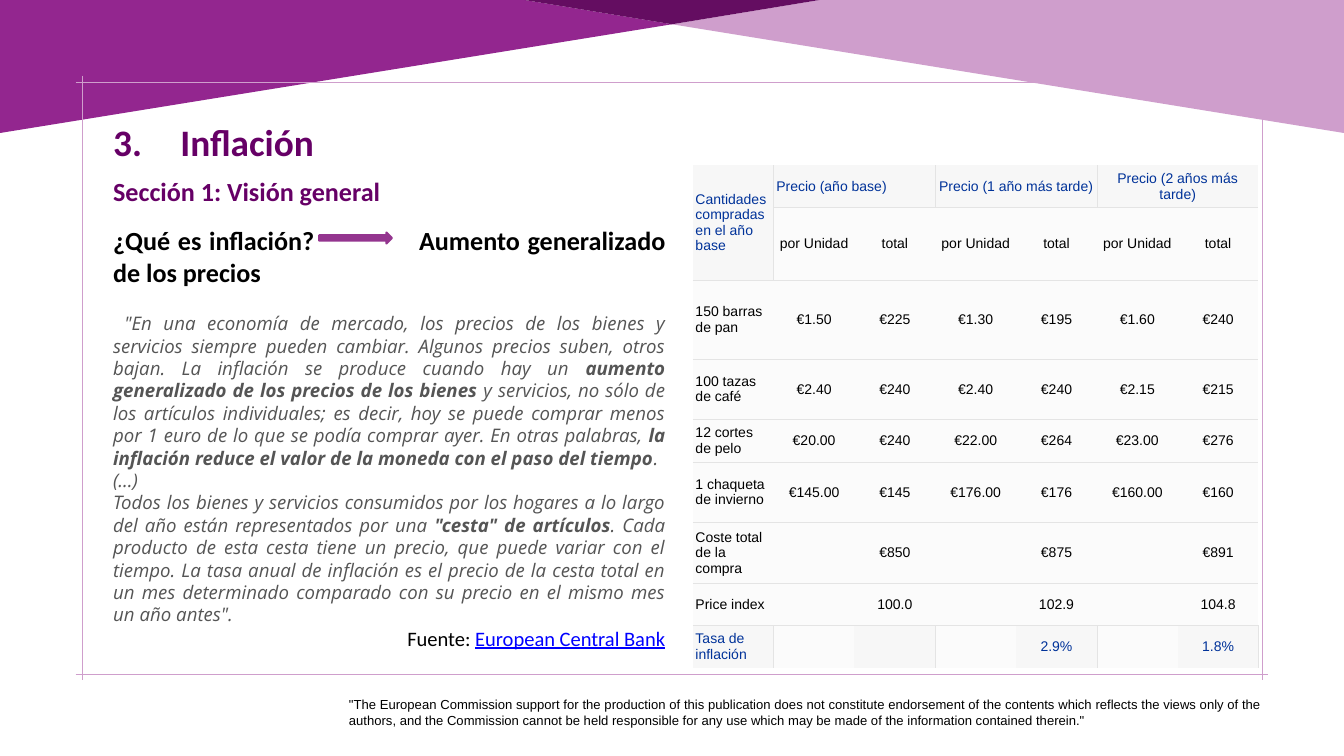
from dataclasses import dataclass

from lxml import etree
from pptx import Presentation
from pptx.dml.color import RGBColor
from pptx.enum.shapes import MSO_SHAPE
from pptx.enum.text import MSO_ANCHOR, MSO_AUTO_SIZE, PP_ALIGN
from pptx.oxml.ns import qn
from pptx.util import Pt

LEFT, CENTER, RIGHT, JUSTIFY = PP_ALIGN.LEFT, PP_ALIGN.CENTER, PP_ALIGN.RIGHT, PP_ALIGN.JUSTIFY
TOP, MIDDLE = MSO_ANCHOR.TOP, MSO_ANCHOR.MIDDLE
NO_AUTOFIT = MSO_AUTO_SIZE.NONE
RIGHT_ARROW = MSO_SHAPE.RIGHT_ARROW


@dataclass(frozen=True)
class Theme:
    purple: str = "93268F"
    lilac: str = "CF9ECC"
    plum: str = "640D61"
    title: str = "660066"
    arrow: str = "94358F"
    black: str = "000000"
    quote: str = "555555"
    link: str = "0000FF"
    header: str = "003299"
    header_fill: str = "F7F7F7"
    cell_fill: str = "FBFBFB"
    rule: str = "E4E4E4"
    heading_font: str = "Calibri"
    quote_font: str = "Open Sans"
    table_font: str = "Arial"
    title_size: int = 40
    section_size: int = 28
    source_size: int = 22
    quote_size: int = 20
    table_size: int = 15
    notice_size: int = 14


THEME = Theme()

NOTICE = (
    '"The European Commission support for the production of this publication does not constitute '
    "endorsement of the contents which reflects the views only of the authors, and the Commission "
    'cannot be held responsible for any use which may be made of the information contained therein."'
)

# Alternating regular and bold parts of each quoted paragraph
QUOTE = [
    [
        '"En una economía de mercado, los precios de los bienes y servicios siempre pueden cambiar. '
        "Algunos precios suben, otros bajan. La inflación se produce cuando hay un ",
        "aumento generalizado de los precios de los bienes",
        " y servicios, no sólo de los artículos individuales; es decir, hoy se puede comprar menos "
        "por 1 euro de lo que se podía comprar ayer. En otras palabras, ",
        "la inflación reduce el valor de la moneda con el paso del tiempo",
        ".",
    ],
    ["(…)"],
    [
        "Todos los bienes y servicios consumidos por los hogares a lo largo del año están "
        "representados por una ",
        '"cesta" de artículos',
        ". Cada producto de esta cesta tiene un precio, que puede variar con el tiempo. La tasa anual "
        "de inflación es el precio de la cesta total en un mes determinado comparado con su precio "
        'en el mismo mes un año antes".',
    ],
]

PRICES = [
    ["Cantidades compradas en el año base", "Precio (año base)", "", "Precio (1 año más tarde)", "",
     "Precio (2 años más tarde)", ""],
    [""] + ["por Unidad", "total"] * 3,
    ["150 barras de pan", "€1.50", "€225", "€1.30", "€195", "€1.60", "€240"],
    ["100 tazas de café", "€2.40", "€240", "€2.40", "€240", "€2.15", "€215"],
    ["12 cortes de pelo", "€20.00", "€240", "€22.00", "€264", "€23.00", "€276"],
    ["1 chaqueta de invierno", "€145.00", "€145", "€176.00", "€176", "€160.00", "€160"],
    ["Coste total de la compra", "", "€850", "", "€875", "", "€891"],
    ["Price index", "", "100.0", "", "102.9", "", "104.8"],
    ["Tasa de inflación", "", "", "", "2.9%", "", "1.8%"],
]
ROW_HEIGHTS = [45.4, 78, 84.2, 65, 45.4, 65, 65, 45.4, 45.4]


def rgb(value):
    return RGBColor.from_string(value)


def place(item, left, top, width, height):
    item.left, item.top, item.width, item.height = Pt(left), Pt(top), Pt(width), Pt(height)


def add_run(paragraph, text, font, size, color, bold=False, italic=False, underline=False):
    run = paragraph.add_run()
    run.text = text
    run.font.name, run.font.size = font, Pt(size)
    run.font.color.rgb = rgb(color)
    run.font.bold, run.font.italic, run.font.underline = bold, italic, underline


def format_paragraph(paragraph, align, before=0, indent=0):
    paragraph.alignment = align
    paragraph.space_before = Pt(before)
    props = paragraph._p.get_or_add_pPr()
    props.set("marL", "0")
    props.set("indent", str(Pt(indent)))
    etree.SubElement(props, qn("a:buNone"))


def prepare_frame(frame):
    frame.word_wrap = True
    frame.auto_size = NO_AUTOFIT
    frame.vertical_anchor = TOP
    return frame


def add_polygon(slide, points, color):
    corners = [(Pt(x), Pt(y)) for x, y in points]
    builder = slide.shapes.build_freeform(*corners[0])
    builder.add_line_segments(corners[1:], close=True)
    band = builder.convert_to_shape()
    band.shadow.inherit = False
    band.fill.solid()
    band.fill.fore_color.rgb = rgb(color)
    band.line.fill.background()


def add_crossed_frame(slide, left, top, right, bottom, overrun):
    # Four strokes that run past the corners
    strokes = [((left - overrun, y), (right + overrun, y)) for y in (top, bottom)]
    strokes += [((x, top - overrun), (x, bottom + overrun)) for x in (left, right)]
    builder = slide.shapes.build_freeform(Pt(strokes[0][0][0]), Pt(strokes[0][0][1]))
    for (x1, y1), (x2, y2) in strokes:
        builder.move_to(Pt(x1), Pt(y1))
        builder.add_line_segments([(Pt(x2), Pt(y2))], close=False)
    frame = builder.convert_to_shape()
    frame.shadow.inherit = False
    frame.fill.background()
    frame.line.color.rgb = rgb(THEME.lilac)
    frame.line.width = Pt(0.5)


def add_backdrop(slide):
    # Ribbons that cross at the top centre
    add_polygon(slide, [(0, 142.5), (0, 0), (562, 0), (720, 26)], THEME.purple)
    add_polygon(slide, [(1440, 142.5), (720, 26), (878, 0), (1440, 0)], THEME.lilac)
    add_polygon(slide, [(720, 26), (562, 0), (878, 0)], THEME.plum)
    add_crossed_frame(slide, 88, 88, 1352, 722, 7)


def fill_title(title):
    place(title, 114, 124, 936, 102)
    frame = prepare_frame(title.text_frame)
    topic = frame.paragraphs[0]
    format_paragraph(topic, LEFT)
    add_run(topic, "3.\t\tInflación", THEME.heading_font, THEME.title_size, THEME.title, bold=True)
    section = frame.add_paragraph()
    format_paragraph(section, LEFT, before=12)
    add_run(section, "Sección 1: Visión general", THEME.heading_font, THEME.section_size,
            THEME.title, bold=True)


def fill_body(body):
    place(body, 114, 237, 606, 497)
    frame = prepare_frame(body.text_frame)
    question = frame.paragraphs[0]
    format_paragraph(question, JUSTIFY)
    # The tabs leave room for the arrow
    add_run(question, "¿Qué es inflación?\t\t\t\tAumento generalizado de los precios",
            THEME.heading_font, THEME.section_size, THEME.black, bold=True)
    for i, parts in enumerate(QUOTE):
        passage = frame.add_paragraph()
        format_paragraph(passage, JUSTIFY, before=0 if i else 26.4, indent=0 if i else 12)
        for j, part in enumerate(parts):
            add_run(passage, part, THEME.quote_font, THEME.quote_size, THEME.quote,
                    bold=j % 2 == 1, italic=True)
    source = frame.add_paragraph()
    format_paragraph(source, RIGHT)
    add_run(source, "Fuente: ", THEME.heading_font, THEME.source_size, THEME.black)
    add_run(source, "European Central Bank", THEME.heading_font, THEME.source_size, THEME.link,
            underline=True)


def set_borders(cell, sides):
    props = cell._tc.get_or_add_tcPr()
    for side in "LRTB":
        line = etree.SubElement(props, qn(f"a:ln{side}"), w=str(Pt(0.75)))
        if side in sides:
            solid = etree.SubElement(line, qn("a:solidFill"))
            etree.SubElement(solid, qn("a:srgbClr"), val=THEME.rule)
        else:
            etree.SubElement(line, qn("a:noFill"))


def border_sides(row, col):
    last = len(PRICES) - 1
    # Vertical rules close the label column and each pair of price columns
    ends = {0: (0, 2, 4), 1: (0,), last: (0, 2, 4, 6)}.get(row, ())
    return (("L" if col - 1 in ends else "") + ("R" if col in ends else "")
            + ("T" if row > 0 else "") + ("B" if row < last else ""))


def add_price_table(slide):
    last = len(PRICES) - 1
    table = slide.shapes.add_table(len(PRICES), len(PRICES[0]), Pt(742.4), Pt(177), Pt(606),
                                   Pt(sum(ROW_HEIGHTS))).table
    table.first_row = table.horz_banding = False
    for row, height in zip(table.rows, ROW_HEIGHTS):
        row.height = Pt(height)
    for r, values in enumerate(PRICES):
        for c, value in enumerate(values):
            cell = table.cell(r, c)
            set_borders(cell, border_sides(r, c))
            shaded = r == 0 or (r == last and c % 2 == 0)
            cell.fill.solid()
            cell.fill.fore_color.rgb = rgb(THEME.header_fill if shaded else THEME.cell_fill)
            cell.vertical_anchor = MIDDLE
            cell.margin_left = cell.margin_right = cell.margin_top = cell.margin_bottom = Pt(2.8)
            if value:
                entry = cell.text_frame.paragraphs[0]
                entry.alignment = LEFT if c == 0 or (r, c) == (0, 1) else CENTER
                add_run(entry, value, THEME.table_font, THEME.table_size,
                        THEME.header if r in (0, last) else THEME.black)
    # Header spans
    table.cell(0, 0).merge(table.cell(1, 0))
    for c in (1, 3, 5):
        table.cell(0, c).merge(table.cell(0, c + 1))


def add_arrow(slide):
    arrow = slide.shapes.add_shape(RIGHT_ARROW, Pt(342), Pt(249), Pt(78), Pt(12))
    arrow.shadow.inherit = False
    arrow.fill.solid()
    arrow.fill.fore_color.rgb = arrow.line.color.rgb = rgb(THEME.arrow)
    arrow.line.width = Pt(2)


def add_notice(slide):
    box = slide.shapes.add_textbox(Pt(366), Pt(741), Pt(993), Pt(37))
    notice = prepare_frame(box.text_frame).paragraphs[0]
    notice.alignment, notice.line_spacing = JUSTIFY, 1.07
    notice._p.get_or_add_pPr().set("marL", str(Pt(0.7)))
    add_run(notice, NOTICE, THEME.table_font, THEME.notice_size, THEME.black)


def main():
    deck = Presentation()
    deck.slide_width, deck.slide_height = Pt(1440), Pt(810)
    slide = deck.slides.add_slide(deck.slide_layouts[1])
    add_backdrop(slide)
    add_notice(slide)
    fill_title(slide.shapes.title)
    fill_body(slide.placeholders[1])
    add_price_table(slide)
    add_arrow(slide)
    deck.save("out.pptx")


if __name__ == "__main__":
    main()
